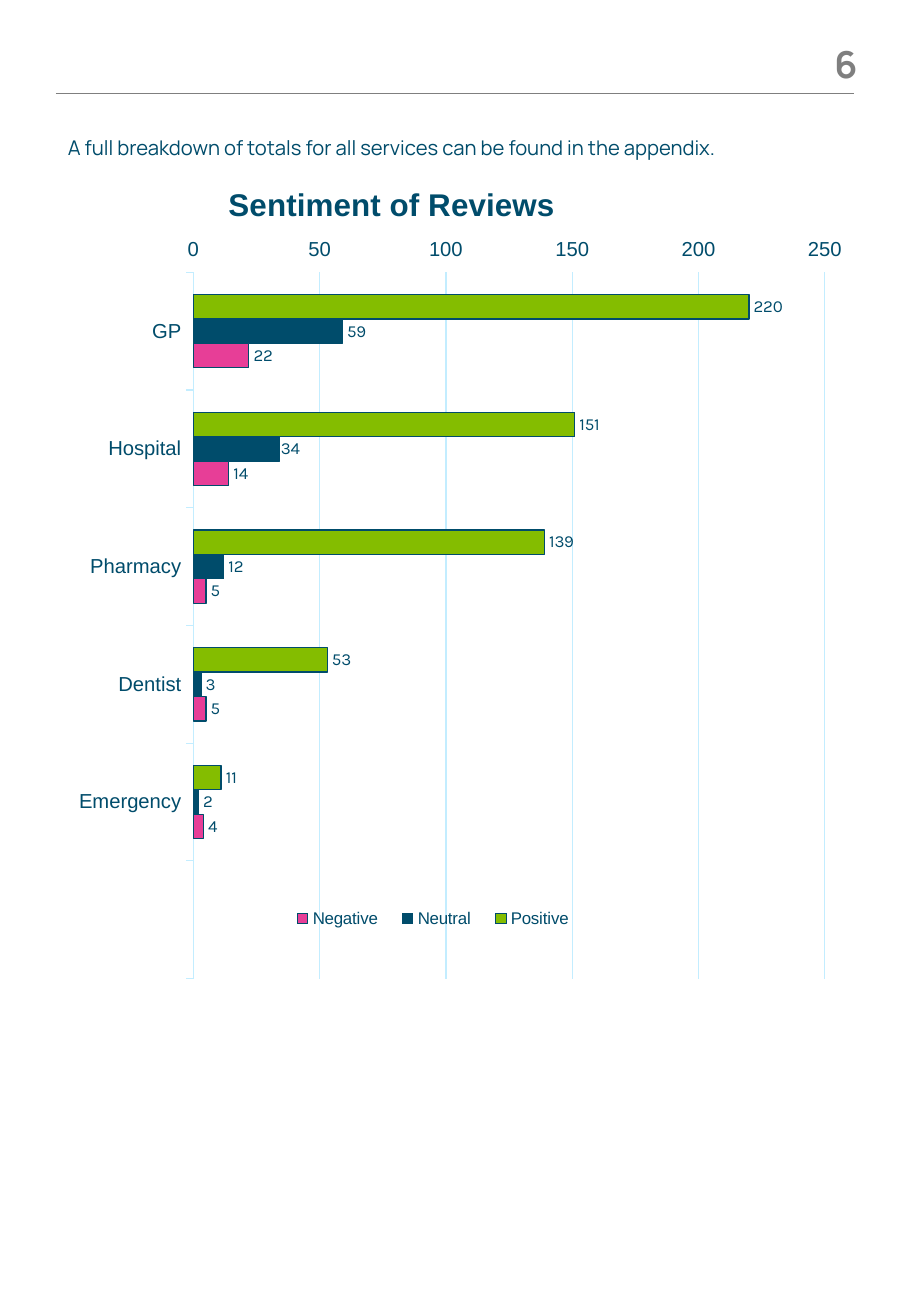
from dataclasses import dataclass

from lxml.etree import SubElement
from pptx import Presentation
from pptx.chart.axis import _BaseAxis as Axis
from pptx.chart.chart import Chart
from pptx.chart.data import CategoryChartData
from pptx.dml.color import RGBColor
from pptx.enum.chart import (
    XL_AXIS_CROSSES as Crosses,
    XL_CHART_TYPE as ChartType,
    XL_LABEL_POSITION as LabelPosition,
    XL_LEGEND_POSITION as LegendPosition,
    XL_TICK_MARK as TickMark,
)
from pptx.enum.shapes import MSO_CONNECTOR as Connector
from pptx.enum.text import PP_ALIGN as Align
from pptx.oxml.ns import qn
from pptx.slide import Slide
from pptx.text.text import Font
from pptx.util import Cm, Pt

COLORS = {
    "navy": "004C6B",
    "green": "84BD00",
    "pink": "E73E97",
    "pale": "C3EDFF",
    "grey": "7F7F7F",
}
SERVICES = ["GP", "Hospital", "Pharmacy", "Dentist", "Emergency", ""]


@dataclass
class Sentiment:
    name: str
    totals: list[int | None]
    color: str


@dataclass
class Caption:
    text: str
    left: float
    top: float
    width: float
    height: float
    size: float
    color: str
    bold: bool = False
    align: Align = Align.LEFT
    padding: tuple[float, float] = (0, 0)


SENTIMENTS = [
    Sentiment("Positive", [220, 151, 139, 53, 11, None], "green"),
    Sentiment("Neutral", [59, 34, 12, 3, 2, None], "navy"),
    Sentiment("Negative", [22, 14, 5, 5, 4, None], "pink"),
]
CAPTIONS = [
    Caption("6", 16.28, 0.86, 1.65, 0.91, 22, "grey", True, Align.RIGHT),
    Caption(
        "A full breakdown of totals for all services can be found in the appendix.",
        1.17, 2.69, 16.66, 0.76, 12, "navy", padding=(0.25, 0.13),
    ),
]


def rgb(color: str) -> RGBColor:
    return RGBColor.from_string(COLORS[color])


def style_font(font: Font, name: str, size: float, color: str, bold: bool = False) -> None:
    font.name = name
    font.size = Pt(size)
    font.bold = bold
    font.color.rgb = rgb(color)


def add_caption(slide: Slide, caption: Caption) -> None:
    box = slide.shapes.add_textbox(
        Cm(caption.left), Cm(caption.top), Cm(caption.width), Cm(caption.height)
    )
    frame = box.text_frame
    frame.word_wrap = True
    side, end = caption.padding
    frame.margin_left = frame.margin_right = Cm(side)
    frame.margin_top = frame.margin_bottom = Cm(end)
    paragraph = frame.paragraphs[0]
    paragraph.alignment = caption.align
    run = paragraph.add_run()
    run.text = caption.text
    style_font(run.font, "Manrope", caption.size, caption.color, caption.bold)


def add_header_rule(slide: Slide) -> None:
    rule = slide.shapes.add_connector(
        Connector.STRAIGHT, Cm(1.17), Cm(1.96), Cm(17.86), Cm(1.96)
    )
    rule.line.color.rgb = rgb("grey")
    rule.line.width = Pt(0.75)
    SubElement(rule.element.spPr, qn("a:effectLst"))


def place(chart: Chart, part: str, after: str | None = None, **layout: str | float) -> None:
    owner = chart.element.find(f".//{qn(part)}")
    for old in owner.findall(qn("c:layout")):
        owner.remove(old)
    holder = SubElement(owner, qn("c:layout"))
    manual = SubElement(holder, qn("c:manualLayout"))
    for key, value in layout.items():
        SubElement(manual, qn(f"c:{key}")).set("val", str(value))
    owner.insert(owner.index(owner.find(qn(after))) + 1 if after else 0, holder)


def style_axes(chart: Chart) -> None:
    services, totals = chart.category_axis, chart.value_axis
    axes: list[Axis] = [services, totals]
    for axis in axes:
        style_font(axis.tick_labels.font, "Arial", 12, "navy")
        axis.major_tick_mark = TickMark.OUTSIDE
        axis.minor_tick_mark = TickMark.NONE
    services.reverse_order = True
    services.crosses = Crosses.MAXIMUM
    totals.minimum_scale, totals.maximum_scale, totals.major_unit = 0, 250, 50
    totals.has_major_gridlines = True
    totals.format.line.fill.background()
    for line in (services.format.line, totals.major_gridlines.format.line):
        line.color.rgb = rgb("pale")
        line.width = Pt(0.75)


def style_series(chart: Chart) -> None:
    plot = chart.plots[0]
    plot.gap_width, plot.overlap, plot.vary_by_categories = 182, 0, False
    for series, sentiment in zip(plot.series, SENTIMENTS):
        series.format.fill.solid()
        series.format.fill.fore_color.rgb = rgb(sentiment.color)
        series.format.line.color.rgb = rgb("navy")
        series.format.line.width = Pt(0.75)
        labels = series.data_labels
        labels.show_value = True
        labels.position = LabelPosition.OUTSIDE_END
        style_font(labels.font, "Karla", 10, "navy")
    neutral_hospital = plot.series[1].points[1].data_label
    neutral_hospital.position = LabelPosition.OUTSIDE_END
    style_font(neutral_hospital.font, "Karla", 10, "navy")
    place(chart, "c:dLbl", "c:idx", x=-0.004, y=0)


def add_sentiment_chart(slide: Slide) -> None:
    data = CategoryChartData()
    data.categories = SERVICES
    for sentiment in SENTIMENTS:
        data.add_series(sentiment.name, sentiment.totals)
    chart = slide.shapes.add_chart(
        ChartType.BAR_CLUSTERED, Cm(1.17), Cm(3.53), Cm(16.61), Cm(19), data
    ).chart
    style_font(chart.font, "Arial", 10, "navy")

    chart.has_title = True
    heading = chart.chart_title.text_frame.paragraphs[0].add_run()
    heading.text = "Sentiment of Reviews"
    style_font(heading.font, "Arial", 18.6, "navy", True)

    chart.has_legend = True
    chart.legend.position = LegendPosition.BOTTOM
    chart.legend.include_in_layout = False
    style_font(chart.legend.font, "Arial", 10, "navy")

    style_axes(chart)
    style_series(chart)
    edges = {"xMode": "edge", "yMode": "edge"}
    place(chart, "c:title", "c:tx", **edges, x=0.21, y=0.01)
    place(chart, "c:legend", "c:legendPos", **edges, x=0.28, y=0.81, w=0.39, h=0.03)
    place(chart, "c:plotArea", layoutTarget="inner", **edges,
          x=0.173, y=0.114, w=0.795, h=0.777)


def main() -> None:
    deck = Presentation()
    deck.slide_width, deck.slide_height = Cm(19.05), Cm(27.51)
    slide = deck.slides.add_slide(deck.slide_layouts[6])
    add_header_rule(slide)
    add_sentiment_chart(slide)
    for caption in CAPTIONS:
        add_caption(slide, caption)
    deck.save("out.pptx")


if __name__ == "__main__":
    main()
